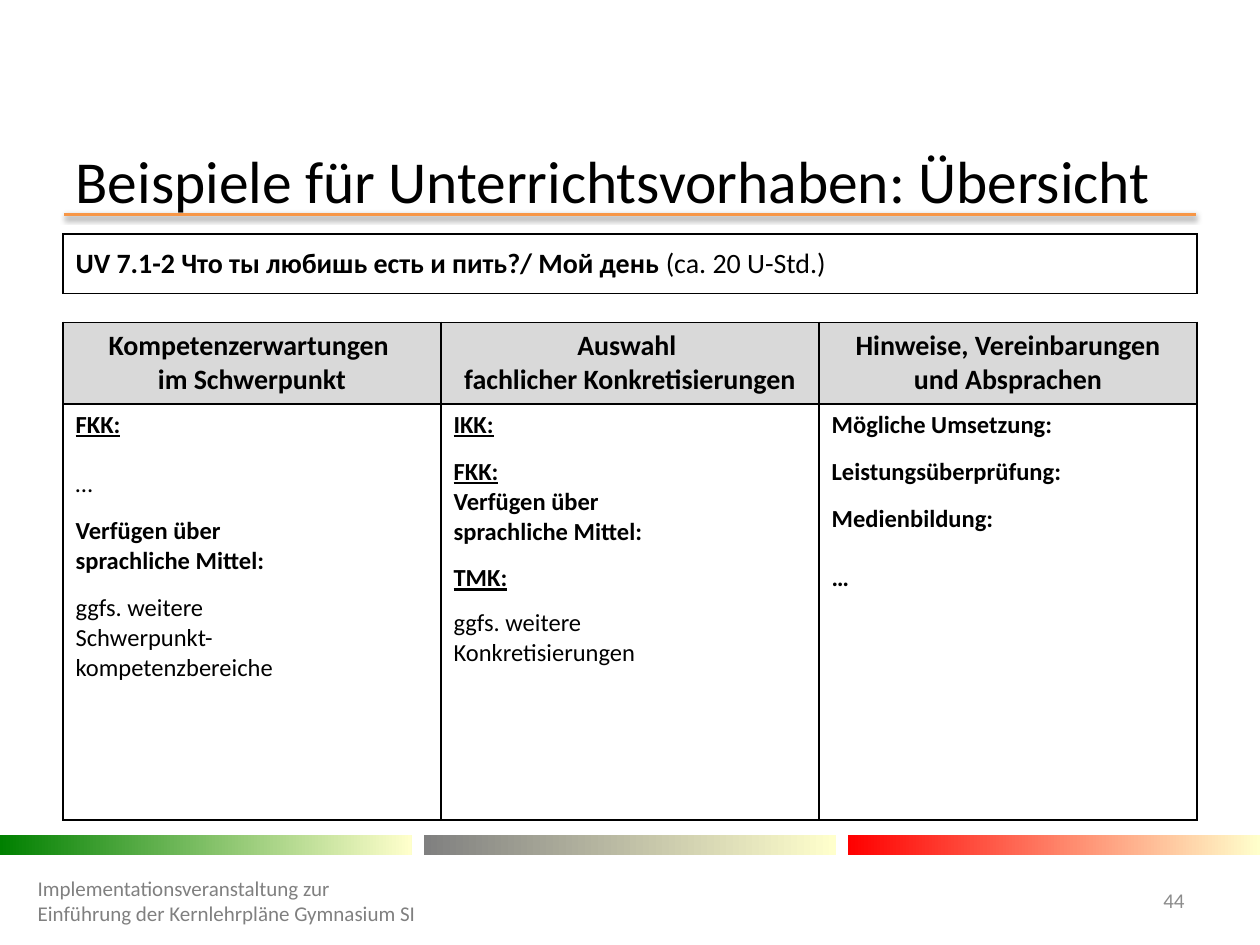
from dataclasses import dataclass

from lxml.etree import SubElement
from pptx import Presentation
from pptx.dml.color import RGBColor
from pptx.enum.shapes import MSO_CONNECTOR, MSO_SHAPE
from pptx.enum.text import MSO_ANCHOR as Anchor, PP_ALIGN as Align
from pptx.oxml.ns import qn
from pptx.util import Cm, Pt


@dataclass(frozen=True)
class Theme:
    font: str = "Calibri"
    black: str = "000000"
    number: str = "8C8C8C"
    footer: str = "808080"
    accent: str = "F79646"
    header: str = "D9D9D9"
    cream: str = "FFFFCC"
    bars: tuple = ("008000", "808080", "FF0000")
    title_size: int = 34
    heading_size: int = 16
    body_size: int = 14
    small_size: int = 12
    spacer_size: int = 6


THEME = Theme()
SMALL_GAP, MEDIUM_GAP, LARGE_GAP = 8.5, 9.8, 17

HEADERS = (
    "Kompetenzerwartungen \nim Schwerpunkt",
    "Auswahl \nfachlicher Konkretisierungen",
    "Hinweise, Vereinbarungen und Absprachen",
)
BOLD = {"bold": True}
UNDERLINED = {"bold": True, "underline": True}
LANGUAGE = "Verfügen über \nsprachliche Mittel:"
COLUMNS = (
    (
        (0, [("FKK:", UNDERLINED)]),
        (LARGE_GAP, [("…", {})]),
        (MEDIUM_GAP, [(LANGUAGE, BOLD)]),
        (MEDIUM_GAP, [("ggfs. weitere \nSchwerpunkt-\nkompetenzbereiche", {})]),
    ),
    (
        (0, [("IKK:", UNDERLINED)]),
        (MEDIUM_GAP, [("FKK:\n", UNDERLINED), (LANGUAGE, BOLD)]),
        (MEDIUM_GAP, [("TMK:", UNDERLINED)]),
        (SMALL_GAP, [("ggfs. weitere \nKonkretisierungen", {})]),
    ),
    (
        (0, [("Mögliche Umsetzung:", BOLD)]),
        (MEDIUM_GAP, [("Leistungsüberprüfung:", BOLD)]),
        (MEDIUM_GAP, [("Medienbildung:", BOLD)]),
        (LARGE_GAP, [("…", BOLD)]),
    ),
)


def write(paragraph, text, size=THEME.body_size, color=THEME.black,
          bold=False, underline=False, align=Align.LEFT):
    paragraph.alignment = align
    for index, line in enumerate(text.split("\n")):
        if index:
            paragraph.add_line_break()
        if line:
            run = paragraph.add_run()
            run.text = line
            font = run.font
            font.name, font.size = THEME.font, Pt(size)
            font.bold, font.underline = bold, underline
            font.color.rgb = RGBColor.from_string(color)


def add_title(slide, text):
    title = slide.shapes.title
    title.left, title.top, title.width, title.height = Cm(1.27), Cm(3.12), Cm(22.86), Cm(0.99)
    frame = title.text_frame
    frame.vertical_anchor = Anchor.MIDDLE
    frame.word_wrap = True
    write(frame.paragraphs[0], text, size=THEME.title_size)


def add_label(slide, text, left, width, **text_format):
    frame = slide.shapes.add_textbox(Cm(left), Cm(17.65), Cm(width), Cm(1.01)).text_frame
    frame.word_wrap = True
    frame.vertical_anchor = Anchor.MIDDLE
    write(frame.paragraphs[0], text, size=THEME.small_size, **text_format)


def add_title_rule(slide):
    rule = slide.shapes.add_connector(MSO_CONNECTOR.STRAIGHT, Cm(1.3), Cm(4.32), Cm(24.1), Cm(4.32))
    rule.line.color.rgb = RGBColor.from_string(THEME.accent)
    rule.line.width = Pt(2)
    effects = SubElement(rule._element.spPr, qn("a:effectLst"))
    shadow = SubElement(effects, qn("a:outerShdw"), blurRad=str(Pt(3.1)),
                        dist=str(Pt(1.6)), dir="5400000", rotWithShape="0")
    color = SubElement(shadow, qn("a:srgbClr"), val=THEME.black)
    SubElement(color, qn("a:alpha"), val="38000")


def add_gradient_bar(slide, left, color):
    bar = slide.shapes.add_shape(MSO_SHAPE.RECTANGLE, Cm(left), Cm(16.84), Cm(8.3), Cm(0.4))
    bar.shadow.inherit = False
    bar.line.fill.background()
    bar.fill.gradient()
    bar.fill.gradient_angle = 0
    for stop, stop_color in zip(bar.fill.gradient_stops, (color, THEME.cream)):
        stop.color.rgb = RGBColor.from_string(stop_color)


def set_borders(cell, visible):
    properties = cell._tc.get_or_add_tcPr()
    for index, side in enumerate(("lnL", "lnR", "lnT", "lnB")):
        border = properties.makeelement(qn(f"a:{side}"), {"w": str(Pt(1))})
        properties.insert(index, border)
        if side in visible:
            fill = SubElement(border, qn("a:solidFill"))
            SubElement(fill, qn("a:srgbClr"), val=THEME.black)
        else:
            SubElement(border, qn("a:noFill"))


def fill_body(cell, paragraphs):
    frame = cell.text_frame
    for index, (gap, runs) in enumerate(paragraphs):
        paragraph = frame.add_paragraph() if index else frame.paragraphs[0]
        if gap:
            paragraph.space_before = Pt(gap)
        for text, text_format in runs:
            write(paragraph, text, **text_format)


def add_plan_table(slide):
    heights = (1.2, 0.58, 1.64, 8.39)
    table = slide.shapes.add_table(4, 3, Cm(1.27), Cm(4.72), Cm(22.86), Cm(sum(heights))).table
    table.first_row = table.horz_banding = False
    for row, height in zip(table.rows, heights):
        row.height = Cm(height)
    for index, row in enumerate(table.rows):
        for cell in row.cells:
            cell.fill.background()
            set_borders(cell, ("lnT", "lnB") if index == 1 else ("lnL", "lnR", "lnT", "lnB"))
    for cell in table.rows[1].cells:
        end = cell.text_frame.paragraphs[0]._p.get_or_add_endParaRPr()
        end.set("sz", str(THEME.spacer_size * 100))

    topic = table.cell(0, 0)
    topic.merge(table.cell(0, 2))
    table.cell(1, 0).merge(table.cell(1, 1))
    topic.vertical_anchor = Anchor.MIDDLE
    paragraph = topic.text_frame.paragraphs[0]
    write(paragraph, "UV 7.1-2 Что ты любишь есть и пить?/ Мой день ",
          size=THEME.heading_size, bold=True)
    write(paragraph, "(ca. 20 U-Std.)", size=THEME.heading_size)

    for column, (header, body) in enumerate(zip(HEADERS, COLUMNS)):
        cell = table.cell(2, column)
        cell.fill.solid()
        cell.fill.fore_color.rgb = RGBColor.from_string(THEME.header)
        cell.vertical_anchor = Anchor.MIDDLE
        write(cell.text_frame.paragraphs[0], header, size=THEME.heading_size,
              bold=True, align=Align.CENTER)
        fill_body(table.cell(3, column), body)


def main():
    presentation = Presentation()
    presentation.slide_width, presentation.slide_height = Cm(25.4), Cm(19.05)
    slide = presentation.slides.add_slide(presentation.slide_layouts[5])
    add_title_rule(slide)
    for index, color in enumerate(THEME.bars):
        add_gradient_bar(slide, index * 8.55, color)
    add_title(slide, "Beispiele für Unterrichtsvorhaben: Übersicht")
    add_label(slide, "44", 22.5, 1.63, color=THEME.number, align=Align.RIGHT)
    add_label(slide, "Implementationsveranstaltung zur Einführung der Kernlehrpläne Gymnasium SI",
              0.51, 8.23, color=THEME.footer)
    add_plan_table(slide)
    presentation.save("out.pptx")


if __name__ == "__main__":
    main()
